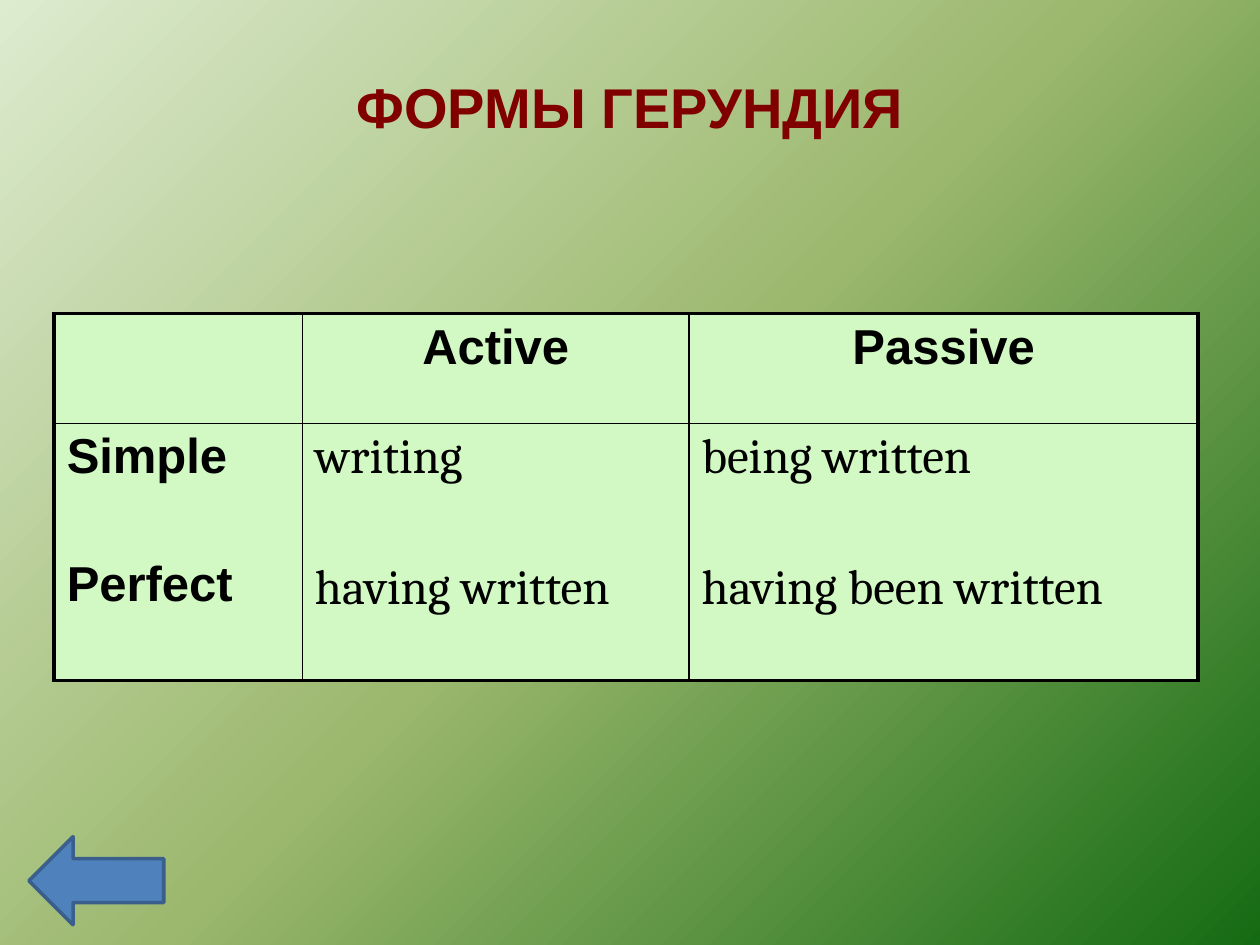
from copy import deepcopy
from dataclasses import dataclass

from lxml import etree
from pptx import Presentation
from pptx.dml.color import RGBColor
from pptx.enum.shapes import MSO_SHAPE
from pptx.enum.text import MSO_ANCHOR, PP_ALIGN
from pptx.oxml.ns import qn
from pptx.util import Inches, Pt

ARROW = MSO_SHAPE.LEFT_ARROW
MID = MSO_ANCHOR.MIDDLE
LEFT, MIDST = PP_ALIGN.LEFT, PP_ALIGN.CENTER

BLACK, MAROON, MINT = "000000", "800000", "D2F9C3"
STOPS = [(0, "DDEBCF"), (0.5, "9CB86E"), (1, "156B13")]
COLS, ROWS = [1.97, 3.07, 4.04], [0.87, 2.04]
THICK, THIN = 2.25, 1


@dataclass
class Style:
    font: str
    size: float
    color: str = BLACK
    bold: bool = False
    align: PP_ALIGN = LEFT
    gap: float = 0  # points above every line after the first


TITLE = Style("Arial", 32, MAROON, True, MIDST)
HEAD = Style("Arial", 28, bold=True, align=MIDST)
SIDE = Style("Arial", 28, bold=True, gap=41.5)
FORM = Style("Cambria", 28, gap=42.5)

GRID = [
    [([], HEAD), (["Active"], HEAD), (["Passive"], HEAD)],
    [
        (["Simple", "Perfect"], SIDE),
        (["writing", "having written"], FORM),
        (["being written", "having been written"], FORM),
    ],
]


def rgb(code: str) -> RGBColor:
    return RGBColor.from_string(code)


def write(frame, lines: list[str], style: Style) -> None:
    for i, line in enumerate(lines):
        para = frame.add_paragraph() if i else frame.paragraphs[0]
        para.alignment = style.align
        para.space_before = Pt(style.gap if i else 0)
        run = para.add_run()
        run.text = line
        font = run.font
        font.name, font.size, font.bold = style.font, Pt(style.size), style.bold
        font.color.rgb = rgb(style.color)


def edge(cell, side: str, width: float) -> None:
    props = cell._tc.get_or_add_tcPr()
    line = etree.SubElement(props, qn(f"a:ln{side}"), w=str(Pt(width)))
    fill = etree.SubElement(line, qn("a:solidFill"))
    etree.SubElement(fill, qn("a:srgbClr"), val=BLACK)


def paint(slide) -> None:
    fill = slide.background.fill
    fill.gradient()
    fill.gradient_angle = 315
    # A new gradient has two stops; add the third
    stops = slide.element.find(f".//{qn('a:gsLst')}")
    stops.append(deepcopy(stops[0]))
    for stop, (place, color) in zip(fill.gradient_stops, STOPS):
        stop.position = place
        stop.color.rgb = rgb(color)


def draw_table(slide) -> None:
    frame = slide.shapes.add_table(
        len(ROWS), len(COLS), Inches(0.43), Inches(2.49),
        Inches(sum(COLS)), Inches(sum(ROWS)))
    table = frame.table
    table.first_row = table.horz_banding = False
    for col, width in zip(table.columns, COLS):
        col.width = Inches(width)
    for row, height in zip(table.rows, ROWS):
        row.height = Inches(height)
    for r, cells in enumerate(GRID):
        for c, (lines, style) in enumerate(cells):
            cell = table.cell(r, c)
            # Thick lines on the outer edges only
            outer = {"L": c == 0, "R": c == len(COLS) - 1,
                     "T": r == 0, "B": r == len(ROWS) - 1}
            for side, out in outer.items():
                edge(cell, side, THICK if out else THIN)
            cell.fill.solid()
            cell.fill.fore_color.rgb = rgb(MINT)
            write(cell.text_frame, lines, style)


def draw_arrow(slide) -> None:
    arrow = slide.shapes.add_shape(
        ARROW, Inches(0.23), Inches(6.64), Inches(1.07), Inches(0.7))
    arrow.shadow.inherit = False
    arrow.fill.solid()
    arrow.fill.fore_color.rgb = rgb("4F81BD")
    arrow.line.color.rgb = rgb("3A5F8C")
    arrow.line.width = Pt(2)


def main() -> None:
    deck = Presentation()
    deck.slide_width, deck.slide_height = Inches(10), Inches(7.5)
    slide = deck.slides.add_slide(deck.slide_layouts[5])
    paint(slide)

    # Title
    title = slide.shapes.title
    title.left, title.top = Inches(0.5), Inches(0.3)
    title.width, title.height = Inches(9), Inches(1.09)
    title.text_frame.vertical_anchor = MID
    write(title.text_frame, ["ФОРМЫ ГЕРУНДИЯ"], TITLE)

    # Verb forms and back arrow
    draw_table(slide)
    draw_arrow(slide)
    deck.save("out.pptx")


if __name__ == "__main__":
    main()
